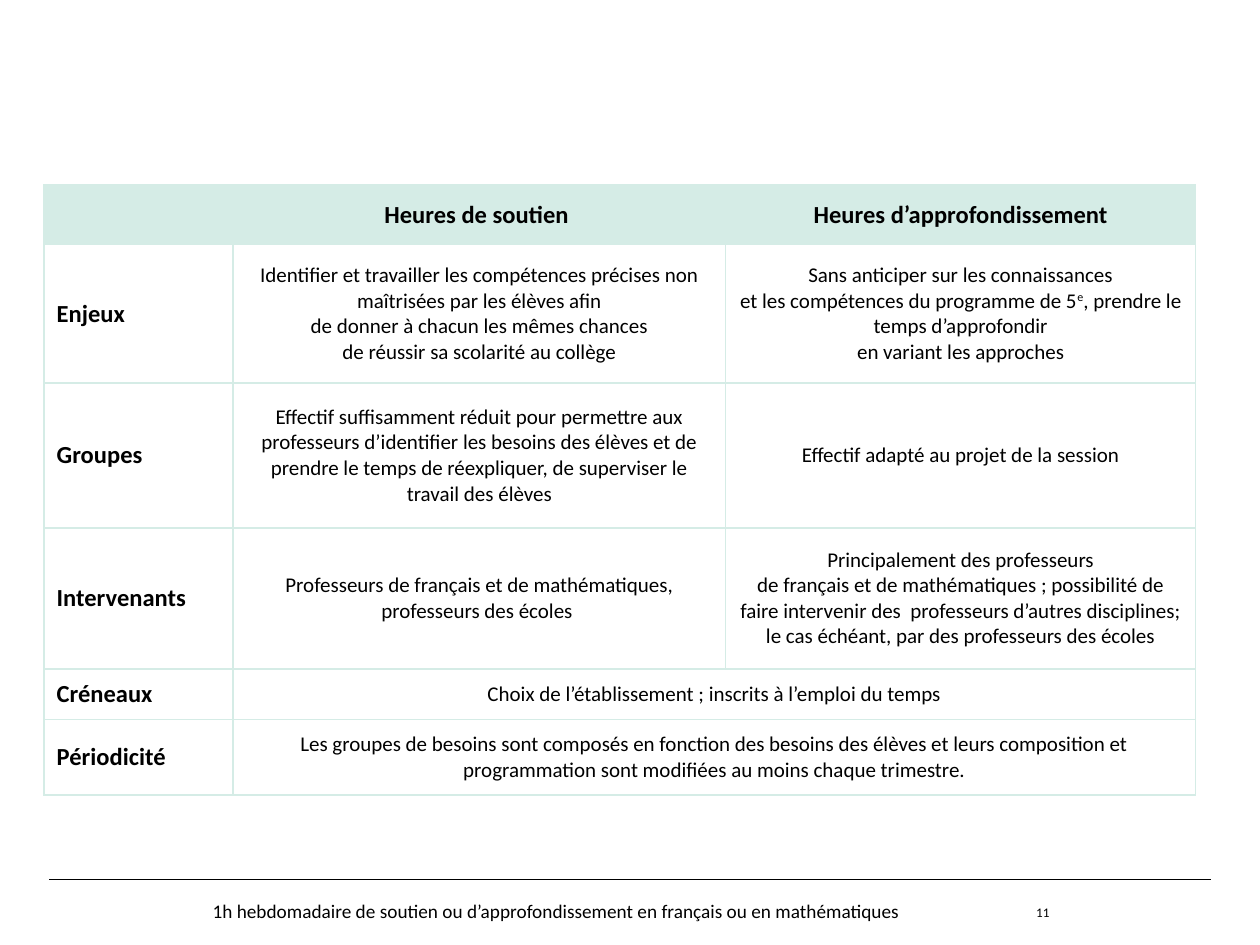
from lxml import etree
from pptx import Presentation
from pptx.dml.color import RGBColor
from pptx.enum.shapes import MSO_CONNECTOR
from pptx.enum.text import MSO_ANCHOR, PP_ALIGN
from pptx.oxml.ns import qn
from pptx.util import Inches, Pt

STRAIGHT = MSO_CONNECTOR.STRAIGHT
MIDDLE = MSO_ANCHOR.MIDDLE
LEFT, CENTER, RIGHT = PP_ALIGN.LEFT, PP_ALIGN.CENTER, PP_ALIGN.RIGHT

FONT = "Calibri"
BLACK = RGBColor(0x00, 0x00, 0x00)
MINT = RGBColor(0xD5, 0xEC, 0xE6)

# A cell is a list of spans; a span is (text, superscript).
HEADERS = ["", "Heures de soutien ", "Heures d’approfondissement"]
ROWS = [
    ("Enjeux",
     [("Identifier et travailler les compétences précises non maîtrisées par les élèves afin\n"
       "de donner à chacun les mêmes chances\nde réussir sa scolarité au collège", False)],
     [("Sans anticiper sur les connaissances\net les compétences du programme de 5", False),
      ("e", True),
      (", prendre le temps d’approfondir\nen variant les approches", False)]),
    ("Groupes",
     [("Effectif suffisamment réduit pour permettre aux professeurs d’identifier les besoins "
       "des élèves et de prendre le temps de réexpliquer, de superviser le travail des élèves",
       False)],
     [("Effectif adapté au projet de la session", False)]),
    ("Intervenants",
     [("Professeurs de français et de mathématiques, professeurs des écoles ", False)],
     [("Principalement des professeurs\nde français et de mathématiques ; possibilité de faire "
       "intervenir des  professeurs d’autres disciplines; le cas échéant, par des professeurs "
       "des écoles", False)]),
    ("Créneaux",
     [("Choix de l’établissement ; inscrits à l’emploi du temps", False)]),
    ("Périodicité",
     [("Les groupes de besoins sont composés en fonction des besoins des élèves et leurs "
       "composition et programmation sont modifiées au moins chaque trimestre.", False)]),
]
COLUMN_WIDTHS = [1.5, 3.91, 3.73]
ROW_HEIGHTS = [0.47, 1.1, 1.15, 1.12, 0.4, 0.6]
FOOTER = "1h hebdomadaire de soutien ou d’approfondissement en français ou en mathématiques"
PAGE_NUMBER = "11"


def write(frame, spans, size, align, bold=False):
    paragraph = frame.paragraphs[0]
    paragraph.alignment = align
    for text, superscript in spans:
        for index, line in enumerate(text.split("\n")):
            if index:
                paragraph.add_line_break()
            span = paragraph.add_run()
            span.text = line
            span.font.name = FONT
            span.font.size = Pt(size)
            span.font.bold = bold
            span.font.color.rgb = BLACK
            if superscript:
                span.font._element.set("baseline", "30000")


def outline_cell(cell):
    properties = cell._tc.get_or_add_tcPr()
    for index, side in enumerate(("lnL", "lnR", "lnT", "lnB")):
        border = etree.Element(qn(f"a:{side}"), w=str(Pt(1)))
        fill = etree.SubElement(border, qn("a:solidFill"))
        etree.SubElement(fill, qn("a:srgbClr"), val=str(MINT))
        properties.insert(index, border)


def add_comparison_table(page):
    table = page.shapes.add_table(
        len(ROW_HEIGHTS), len(COLUMN_WIDTHS), Inches(0.35), Inches(1.47),
        Inches(sum(COLUMN_WIDTHS)), Inches(sum(ROW_HEIGHTS))).table
    table.horz_banding = False
    for column, width in zip(table.columns, COLUMN_WIDTHS):
        column.width = Inches(width)
    for row, height in zip(table.rows, ROW_HEIGHTS):
        row.height = Inches(height)

    for row_index, row in enumerate(table.rows):
        for cell in row.cells:
            cell.vertical_anchor = MIDDLE
            if row_index == 0:
                cell.fill.solid()
                cell.fill.fore_color.rgb = MINT
            else:
                cell.fill.background()
            outline_cell(cell)

    for column_index, header in enumerate(HEADERS):
        if header:
            write(table.cell(0, column_index).text_frame, [(header, False)], 14, CENTER, True)
    for row_index, (label, *contents) in enumerate(ROWS, start=1):
        write(table.cell(row_index, 0).text_frame, [(label, False)], 14, LEFT, True)
        if len(contents) == 1:
            table.cell(row_index, 1).merge(table.cell(row_index, 2))
        for column_index, spans in enumerate(contents, start=1):
            write(table.cell(row_index, column_index).text_frame, spans, 12, CENTER)


def add_footer(page):
    rule = page.shapes.add_connector(
        STRAIGHT, Inches(0.39), Inches(6.98), Inches(9.61), Inches(6.98))
    rule.line.color.rgb = BLACK
    rule.line.width = Pt(0.8)
    etree.SubElement(rule._element.spPr, qn("a:effectLst"))

    number = page.shapes.add_textbox(Inches(6.85), Inches(6.98), Inches(1.48), Inches(0.52))
    frame = number.text_frame
    frame.word_wrap = True
    frame.vertical_anchor = MIDDLE
    frame.margin_left = frame.margin_right = frame.margin_top = frame.margin_bottom = 0
    write(frame, [(PAGE_NUMBER, False)], 7.5, RIGHT)

    caption = page.shapes.add_textbox(Inches(0.57), Inches(7.09), Inches(7.69), Inches(0.29))
    caption.text_frame.word_wrap = True
    write(caption.text_frame, [(FOOTER, False)], 11, CENTER)


def main():
    deck = Presentation()
    deck.slide_width, deck.slide_height = Inches(10), Inches(7.5)
    page = deck.slides.add_slide(deck.slide_layouts[6])
    add_comparison_table(page)
    add_footer(page)
    deck.save("out.pptx")


if __name__ == "__main__":
    main()
